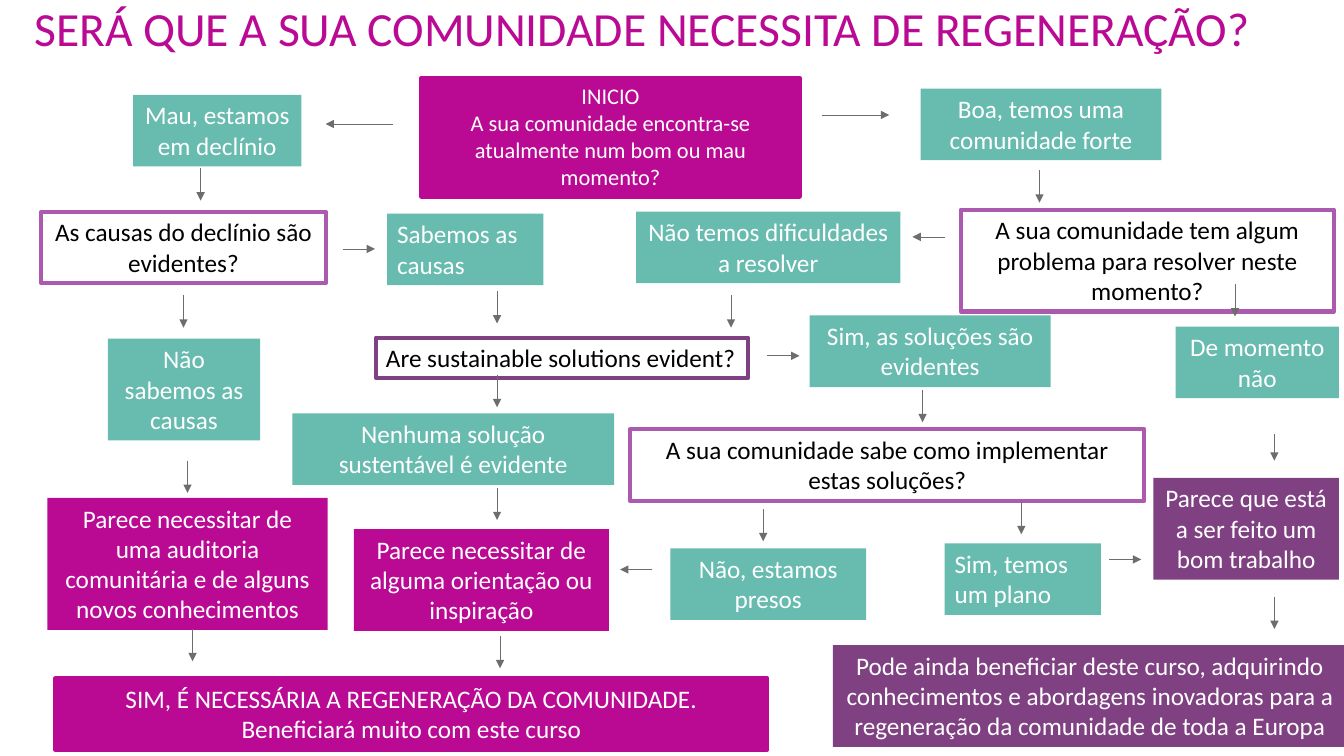
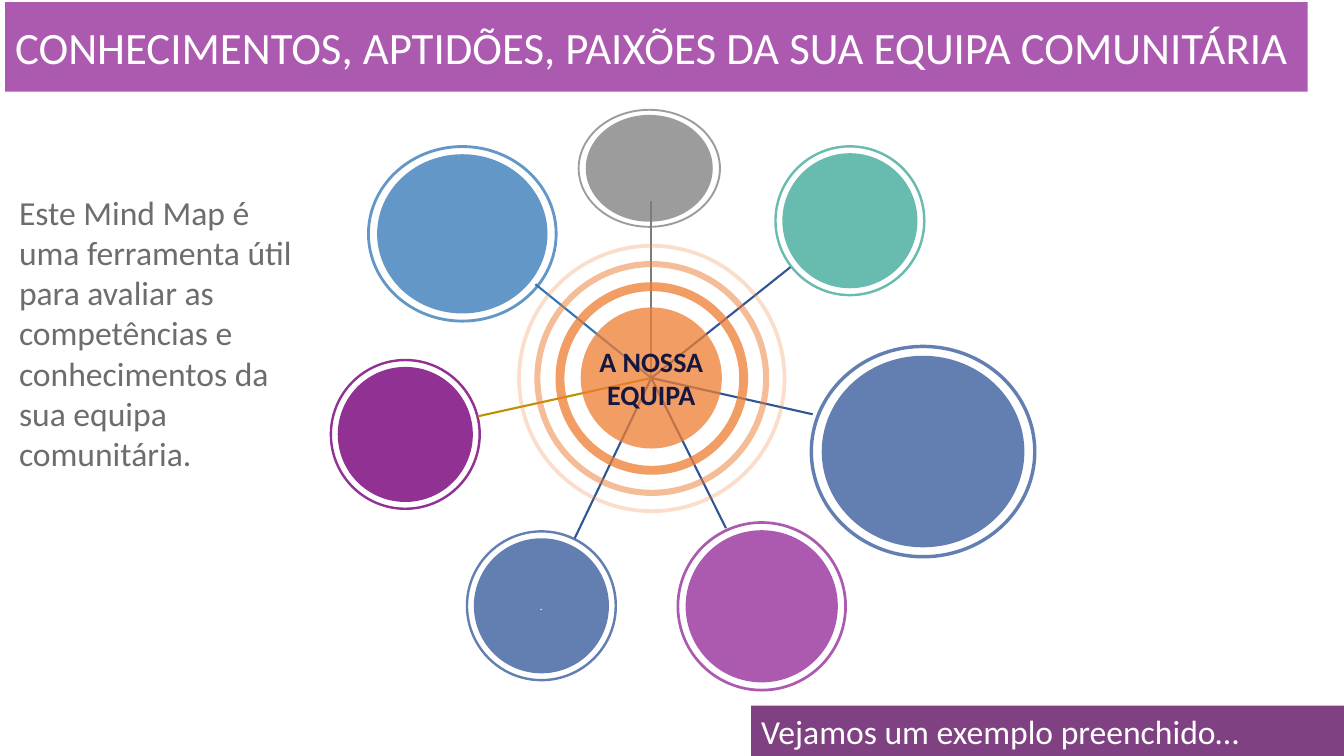
from dataclasses import dataclass
from typing import NamedTuple

from pptx import Presentation
from pptx.dml.color import RGBColor
from pptx.enum.shapes import MSO_CONNECTOR, MSO_SHAPE
from pptx.enum.text import MSO_ANCHOR, MSO_AUTO_SIZE, PP_ALIGN
from pptx.oxml import parse_xml
from pptx.oxml.ns import nsdecls, qn
from pptx.util import Emu, Pt

LEFT, CENTER = PP_ALIGN.LEFT, PP_ALIGN.CENTER
TOP, MIDDLE = MSO_ANCHOR.TOP, MSO_ANCHOR.MIDDLE
RECTANGLE, ELLIPSE, DONUT = MSO_SHAPE.RECTANGLE, MSO_SHAPE.OVAL, MSO_SHAPE.DONUT

# Shared look: 100 px to the inch
EMU_PER_PX = 9144
SLIDE_WIDTH, SLIDE_HEIGHT = 1333, 750
TITLE_ONLY_LAYOUT = 5
FONT = "Calibri"
WHITE, BLACK, GRAY = "FFFFFF", "000000", "6D6E6C"
MAGENTA, TEAL, VIOLET, PLUM = "BA0A94", "68BBAF", "AB5AB0", "7F4182"
NAVY, STEEL, PURPLE = "2F5597", "2E75B6", "903193"
SILVER, GOLD, ORANGE, INK = "7C7C7C", "BF9000", "ED7D31", "161741"


class Box(NamedTuple):
    left: int
    top: int
    width: int
    height: int


@dataclass(frozen=True)
class TextStyle:
    size: int
    color: str
    align: PP_ALIGN = LEFT
    anchor: MSO_ANCHOR = TOP
    bold: bool = False
    spacing: float = 1.0


@dataclass(frozen=True)
class Step:
    box: Box
    text: str
    fill: str | None = TEAL
    border: str | None = None
    size: int = 18
    align: PP_ALIGN = CENTER


class Arrow(NamedTuple):
    x: int
    y: int
    across: int = 0
    down: int = 0


@dataclass(frozen=True)
class Bubble:
    box: Box
    color: str
    opacity: int
    spoke: tuple[int, int]
    spoke_color: str
    text: str = ""


class Ring(NamedTuple):
    size: int
    thickness: float
    opacity: int


# Drawing functions
def px(length: int) -> Emu:
    return Emu(length * EMU_PER_PX)


def rgb(color: str) -> RGBColor:
    return RGBColor.from_string(color)


def emu_box(box: Box) -> list[Emu]:
    return [px(length) for length in box]


def write(shape, text: str, style: TextStyle, inset: bool = True) -> None:
    frame = shape.text_frame
    frame.word_wrap = True
    frame.auto_size = MSO_AUTO_SIZE.NONE
    frame.vertical_anchor = style.anchor
    if not inset:
        frame.margin_left = frame.margin_right = 0
        frame.margin_top = frame.margin_bottom = 0
    frame.text = text
    for paragraph in frame.paragraphs:
        paragraph.alignment = style.align
        paragraph.line_spacing = style.spacing
        for run in paragraph.runs:
            run.font.name = FONT
            run.font.size = Pt(style.size)
            run.font.bold = style.bold
            run.font.color.rgb = rgb(style.color)


def add_title(slide, text: str, box: Box, style: TextStyle, fill: str | None = None) -> None:
    title = slide.shapes.title
    title.left, title.top, title.width, title.height = emu_box(box)
    if fill:
        title.fill.solid()
        title.fill.fore_color.rgb = rgb(fill)
    write(title, text, style)


def add_shape(slide, kind: MSO_SHAPE, box: Box, fill: str | None,
              border: str | None = None, opacity: int = 100):
    shape = slide.shapes.add_shape(kind, *emu_box(box))
    shape.shadow.inherit = False
    if fill:
        shape.fill.solid()
        shape.fill.fore_color.rgb = rgb(fill)
        if opacity < 100:
            color = shape._element.spPr.find(qn("a:solidFill"))[0]
            color.append(parse_xml(f'<a:alpha {nsdecls("a")} val="{opacity * 1000}"/>'))
    else:
        shape.fill.background()
    if border:
        shape.line.color.rgb = rgb(border)
        shape.line.width = Pt(3)
    else:
        shape.line.fill.background()
    return shape


def add_line(slide, start: tuple[int, int], end: tuple[int, int], color: str,
             width: float, arrow: bool = False) -> None:
    line = slide.shapes.add_connector(
        MSO_CONNECTOR.STRAIGHT, *(px(value) for value in (*start, *end)))
    line.line.color.rgb = rgb(color)
    line.line.width = Pt(width)
    properties = line._element.spPr
    if arrow:
        properties.find(qn("a:ln")).append(
            parse_xml(f'<a:tailEnd {nsdecls("a")} type="triangle"/>'))
    properties.append(parse_xml(f'<a:effectLst {nsdecls("a")}/>'))


def add_donut(slide, box: Box, thickness: float, color: str, opacity: int) -> None:
    donut = add_shape(slide, DONUT, box, color, opacity=opacity)
    donut.adjustments[0] = thickness


def add_step(slide, step: Step) -> None:
    shape = add_shape(slide, RECTANGLE, step.box, step.fill, step.border)
    color = WHITE if step.fill else BLACK
    write(shape, step.text, TextStyle(step.size, color, step.align))


def add_bubble(slide, bubble: Bubble) -> None:
    left, top, width, height = bubble.box
    gap_x, gap_y = round(width * 0.053), round(height * 0.053)
    inner = Box(left + gap_x, top + gap_y, width - 2 * gap_x, height - 2 * gap_y)
    disc = add_shape(slide, ELLIPSE, inner, bubble.color, opacity=bubble.opacity)
    if bubble.text:
        write(disc, bubble.text, TextStyle(8, WHITE, CENTER, MIDDLE), inset=False)
    add_donut(slide, bubble.box, 0.016, bubble.color, bubble.opacity)


def centered(center: tuple[int, int], width: int, height: int) -> Box:
    return Box(center[0] - width // 2, center[1] - height // 2, width, height)


# Flowchart content
STEPS = [
    Step(Box(418, 77, 375, 118),
         "INICIO\nA sua comunidade encontra-se atualmente num bom ou mau momento?",
         MAGENTA, MAGENTA, 16),
    Step(Box(132, 94, 167, 71), "Mau, estamos em declínio"),
    Step(Box(913, 88, 239, 71), "Boa, temos uma comunidade forte"),
    Step(Box(41, 210, 282, 71), "As causas do declínio são evidentes?", None, VIOLET),
    Step(Box(384, 212, 155, 71), "Sabemos as causas", align=LEFT),
    Step(Box(107, 336, 151, 101), "Não sabemos as causas"),
    Step(Box(55, 673, 706, 71),
         "SIM, É NECESSÁRIA A REGENERAÇÃO DA COMUNIDADE.\nBeneficiará muito com este curso",
         MAGENTA, MAGENTA),
    Step(Box(826, 640, 510, 101),
         "Pode ainda beneficiar deste curso, adquirindo conhecimentos e abordagens "
         "inovadoras para a regeneração da comunidade de toda a Europa", PLUM),
    Step(Box(373, 335, 369, 40), "Are sustainable solutions evident?", None, PLUM, align=LEFT),
    Step(Box(47, 494, 278, 131),
         "Parece necessitar de uma auditoria comunitária e de alguns novos conhecimentos",
         MAGENTA),
    Step(Box(803, 313, 239, 71), "Sim, as soluções são evidentes"),
    Step(Box(290, 410, 319, 71), "Nenhuma solução sustentável é evidente"),
    Step(Box(351, 525, 253, 101), "Parece necessitar de alguma orientação ou inspiração",
         MAGENTA),
    Step(Box(953, 208, 370, 101),
         "A sua comunidade tem algum problema para resolver neste momento?", None, VIOLET),
    Step(Box(631, 210, 262, 71), "Não temos dificuldades a resolver"),
    Step(Box(1166, 324, 162, 71), "De momento não"),
    Step(Box(1144, 474, 184, 101), "Parece que está a ser feito um bom trabalho", PLUM),
    Step(Box(625, 426, 510, 71), "A sua comunidade sabe como implementar estas soluções?",
         None, VIOLET),
    Step(Box(937, 539, 155, 71), "Sim, temos um plano", align=LEFT),
    Step(Box(665, 544, 194, 71), "Não, estamos presos"),
]
SHORT, LONG = 32, 67
DOWN_STARTS = [
    (199, 167), (182, 293), (186, 457), (191, 624), (493, 289), (493, 372), (493, 484),
    (496, 631), (1031, 169), (725, 293), (1225, 282), (1264, 592), (915, 387),
    (1013, 498), (757, 505),
]
ARROWS = [Arrow(x, y, down=SHORT) for x, y in DOWN_STARTS] + [
    Arrow(1264, 431, down=26),
    Arrow(390, 123, -LONG), Arrow(815, 114, LONG),
    Arrow(340, 247, SHORT), Arrow(761, 353, SHORT), Arrow(1100, 555, SHORT),
    Arrow(937, 235, -SHORT), Arrow(647, 565, -SHORT),
]

# Mind map content
HUB = (646, 375)
BUBBLES = [
    Bubble(Box(573, 108, 142, 118), SILVER, 75, (646, 199), SILVER),
    Bubble(Box(768, 144, 150, 150), TEAL, 100, (784, 265), NAVY),
    Bubble(Box(803, 342, 225, 212), NAVY, 75, (806, 411), NAVY),
    Bubble(Box(671, 517, 169, 169), VIOLET, 100, (720, 524), NAVY),
    Bubble(Box(462, 526, 150, 150), NAVY, 75, (570, 534), NAVY, "."),
    Bubble(Box(327, 356, 150, 150), PURPLE, 100, (474, 413), GOLD),
    Bubble(Box(364, 144, 189, 176), STEEL, 75, (531, 282), STEEL),
]
RINGS = [Ring(191, 0.046, 75), Ring(233, 0.026, 50), Ring(267, 0.014, 25)]


def build_flowchart(slide) -> None:
    add_title(slide, "SERÁ QUE A SUA COMUNIDADE NECESSITA DE REGENERAÇÃO?",
              Box(24, 0, 1355, 76), TextStyle(34, MAGENTA, spacing=0.9))
    for step in STEPS:
        add_step(slide, step)
    for x, y, across, down in ARROWS:
        add_line(slide, (x, y), (x + across, y + down), GRAY, 0.5, arrow=True)


def build_mind_map(slide) -> None:
    add_title(slide, "CONHECIMENTOS, APTIDÕES, PAIXÕES DA SUA EQUIPA COMUNITÁRIA",
              Box(5, 2, 1292, 89), TextStyle(32, WHITE, anchor=MIDDLE), VIOLET)

    # Bubbles and spokes
    for bubble in BUBBLES:
        add_bubble(slide, bubble)
    for bubble in BUBBLES:
        add_line(slide, bubble.spoke, HUB, bubble.spoke_color, 1.5)

    # Hub
    add_shape(slide, ELLIPSE, centered(HUB, 140, 140), ORANGE, opacity=75)
    for ring in RINGS:
        add_donut(slide, centered(HUB, ring.size, ring.size), ring.thickness,
                  ORANGE, ring.opacity)
    label = slide.shapes.add_textbox(*emu_box(centered(HUB, 130, 80)))
    write(label, "A NOSSA EQUIPA", TextStyle(20, INK, CENTER, MIDDLE, bold=True), inset=False)

    # Side text and closing band
    note = slide.shapes.add_textbox(*emu_box(Box(9, 185, 301, 293)))
    write(note, "Este Mind Map é uma ferramenta útil para avaliar as competências e "
                "conhecimentos da sua equipa comunitária.", TextStyle(24, GRAY))
    band = add_shape(slide, RECTANGLE, Box(745, 700, 588, 50), PLUM)
    write(band, "Vejamos um exemplo preenchido…", TextStyle(24, WHITE))


def main() -> None:
    presentation = Presentation()
    presentation.slide_width = px(SLIDE_WIDTH)
    presentation.slide_height = px(SLIDE_HEIGHT)
    layout = presentation.slide_layouts[TITLE_ONLY_LAYOUT]
    for build in (build_flowchart, build_mind_map):
        build(presentation.slides.add_slide(layout))
    presentation.save("out.pptx")


if __name__ == "__main__":
    main()
